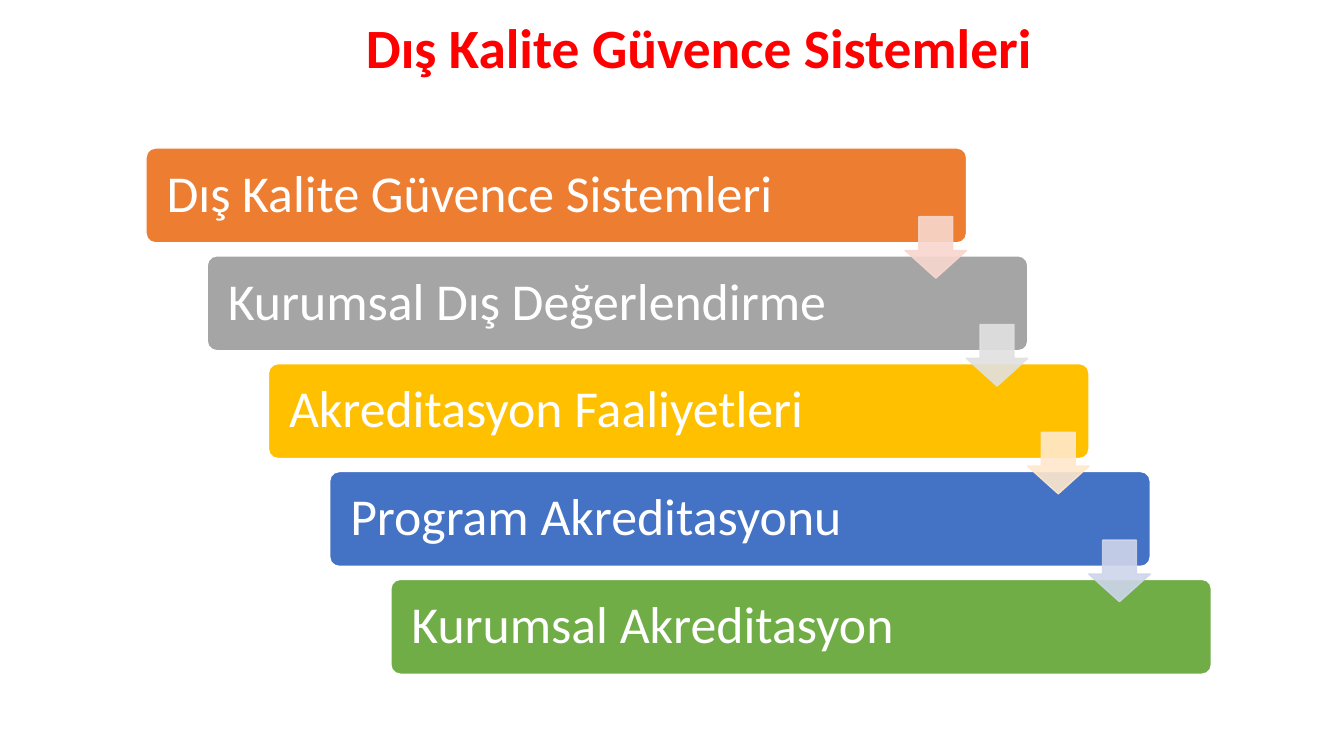
from lxml import etree
from pptx import Presentation
from pptx.dml.color import RGBColor
from pptx.enum import shapes, text
from pptx.oxml import ns
from pptx.util import Cm, Pt

COLORS = {
    "title": "FF0000",
    "white": "FFFFFF",
    "orange": "ED7D31",
    "gray": "A5A5A5",
    "gold": "FFC000",
    "blue": "4472C4",
    "green": "70AD47",
    "pale_orange": "F8D7CE",
    "pale_gray": "E1E1E1",
    "pale_gold": "FFE8CC",
    "pale_blue": "CFD5EA",
}

TITLE = "Dış Kalite Güvence Sistemleri"
# Label, bar colour, colour of the arrow to the next step
STEPS = [
    ("Dış Kalite Güvence Sistemleri", "orange", "pale_orange"),
    ("Kurumsal Dış Değerlendirme", "gray", "pale_gray"),
    ("Akreditasyon Faaliyetleri", "gold", "pale_gold"),
    ("Program Akreditasyonu", "blue", "pale_blue"),
    ("Kurumsal Akreditasyon", "green", None),
]
BAR_WIDTH, BAR_HEIGHT = 20.68, 2.39
ARROW_SIZE, ARROW_DROP = 1.55, 1.73


def write(shape, words, *, size, color, bold=False, align=text.PP_ALIGN.LEFT, inset=0.25):
    frame = shape.text_frame
    frame.word_wrap = True
    frame.vertical_anchor = text.MSO_ANCHOR.MIDDLE
    frame.margin_left = frame.margin_right = Cm(inset)
    frame.margin_top = frame.margin_bottom = Cm(0.13)
    paragraph = frame.paragraphs[0]
    paragraph.alignment = align
    paragraph.line_spacing = 0.9
    run = paragraph.add_run()
    run.text = words
    run.font.name = "Calibri"
    run.font.size = Pt(size)
    run.font.bold = bold
    run.font.color.rgb = RGBColor.from_string(COLORS[color])


def add_block(slide, kind, box, adjustments, fill, line, opacity=100):
    shape = slide.shapes.add_shape(kind, *map(Cm, box))
    shape.shadow.inherit = False
    for index, value in enumerate(adjustments):
        shape.adjustments[index] = value
    shape.fill.solid()
    shape.fill.fore_color.rgb = RGBColor.from_string(COLORS[fill])
    shape.line.color.rgb = RGBColor.from_string(COLORS[line])
    shape.line.width = Pt(1)
    if opacity < 100:
        for color in shape.element.spPr.iter(ns.qn("a:srgbClr")):
            etree.SubElement(color, ns.qn("a:alpha"), val=str(opacity * 1000))
    return shape


def add_title(slide, box):
    title = slide.shapes.add_textbox(*map(Cm, box))
    write(title, TITLE, size=39.6, color="title", bold=True, align=text.PP_ALIGN.CENTER)


def add_staircase(slide, box):
    left, top, width, height = box
    step_x = (width - BAR_WIDTH) / (len(STEPS) - 1)
    step_y = (height - BAR_HEIGHT) / (len(STEPS) - 1)

    # Bars, each one step right and down
    for index, (label, fill, _) in enumerate(STEPS):
        bar = add_block(
            slide, shapes.MSO_SHAPE.ROUNDED_RECTANGLE,
            (left + index * step_x, top + index * step_y, BAR_WIDTH, BAR_HEIGHT),
            [0.1], fill, "white")
        write(bar, label, size=37, color="white", inset=0.45)

    # Arrows, flush with the right end of the bar they leave
    for index, (_, _, tint) in enumerate(STEPS[:-1]):
        add_block(
            slide, shapes.MSO_SHAPE.DOWN_ARROW,
            (left + index * step_x + BAR_WIDTH - ARROW_SIZE,
             top + index * step_y + ARROW_DROP, ARROW_SIZE, ARROW_SIZE),
            [0.55, 0.45], tint, tint, opacity=90)


def main():
    presentation = Presentation()
    presentation.slide_width, presentation.slide_height = Cm(33.87), Cm(19.05)
    slide = presentation.slides.add_slide(presentation.slide_layouts[6])
    add_staircase(slide, (3.68, 3.73, 26.85, 13.26))
    add_title(slide, (3.1, 0.38, 29.03, 1.78))
    presentation.save("out.pptx")


if __name__ == "__main__":
    main()
